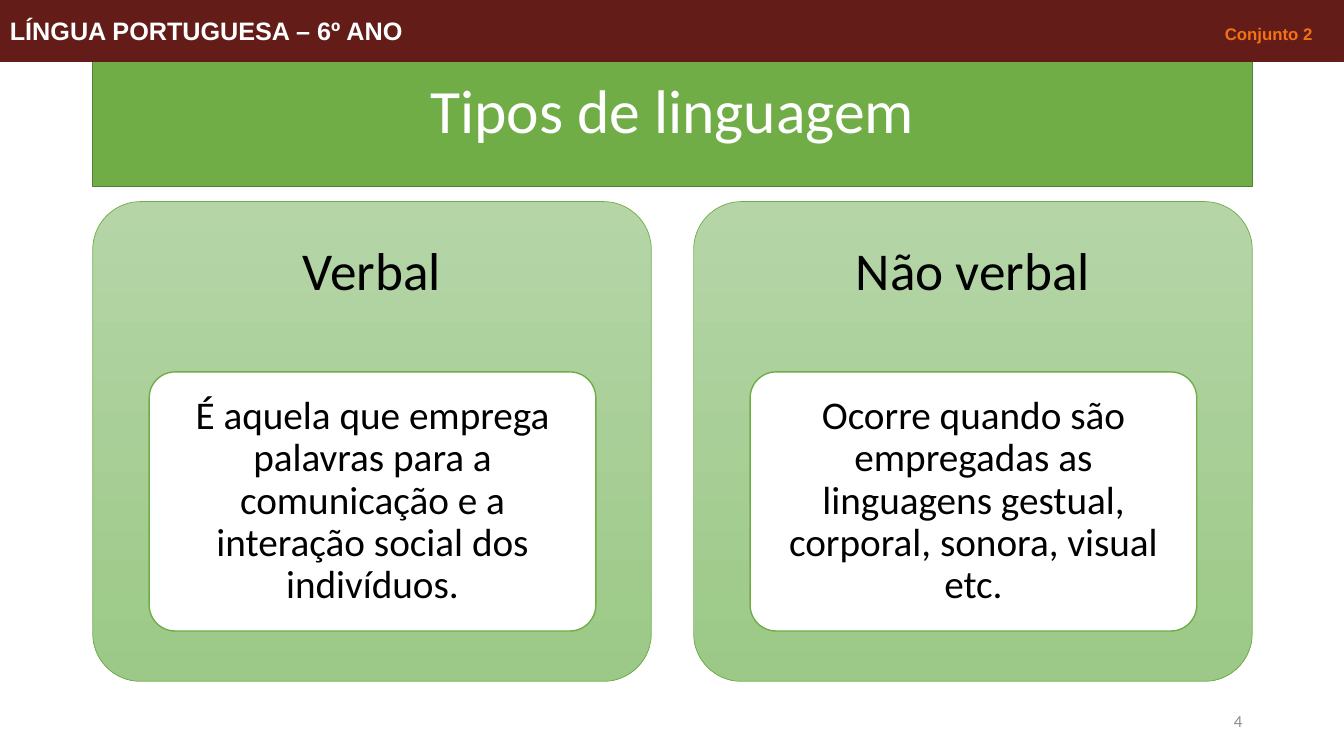
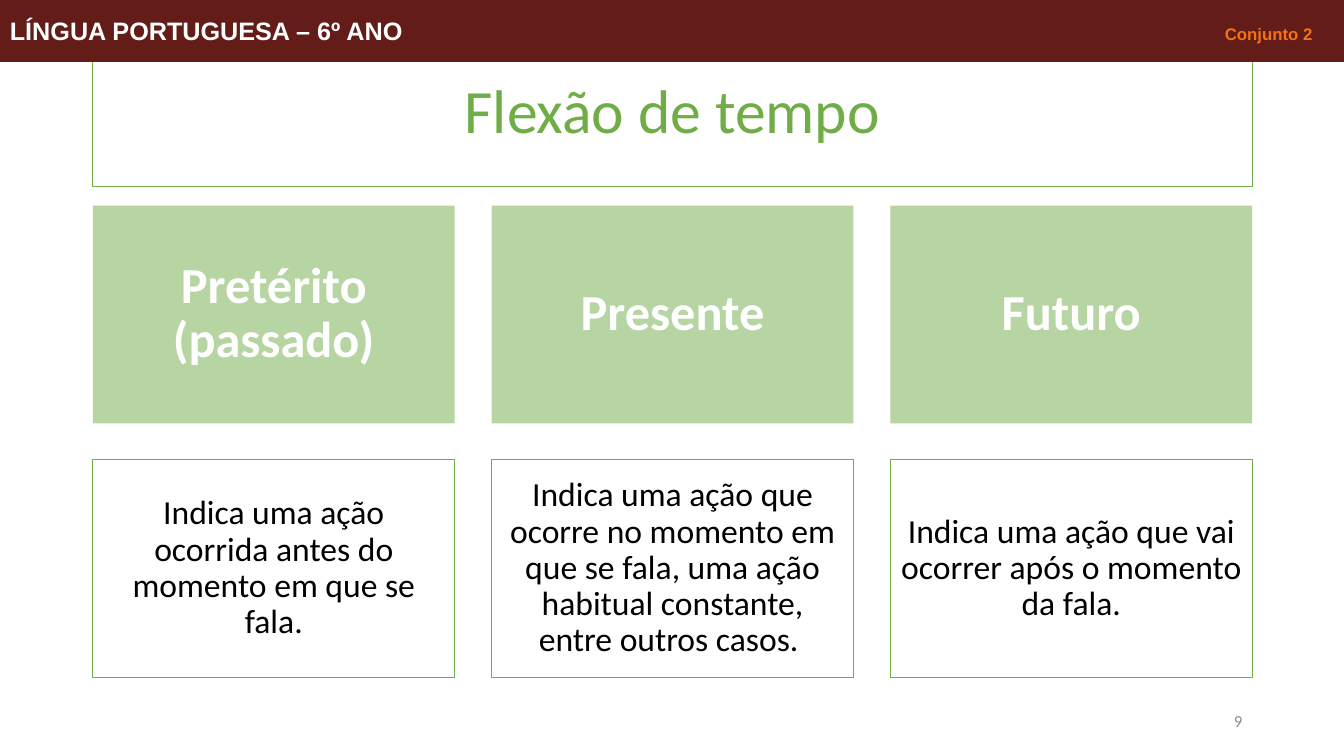
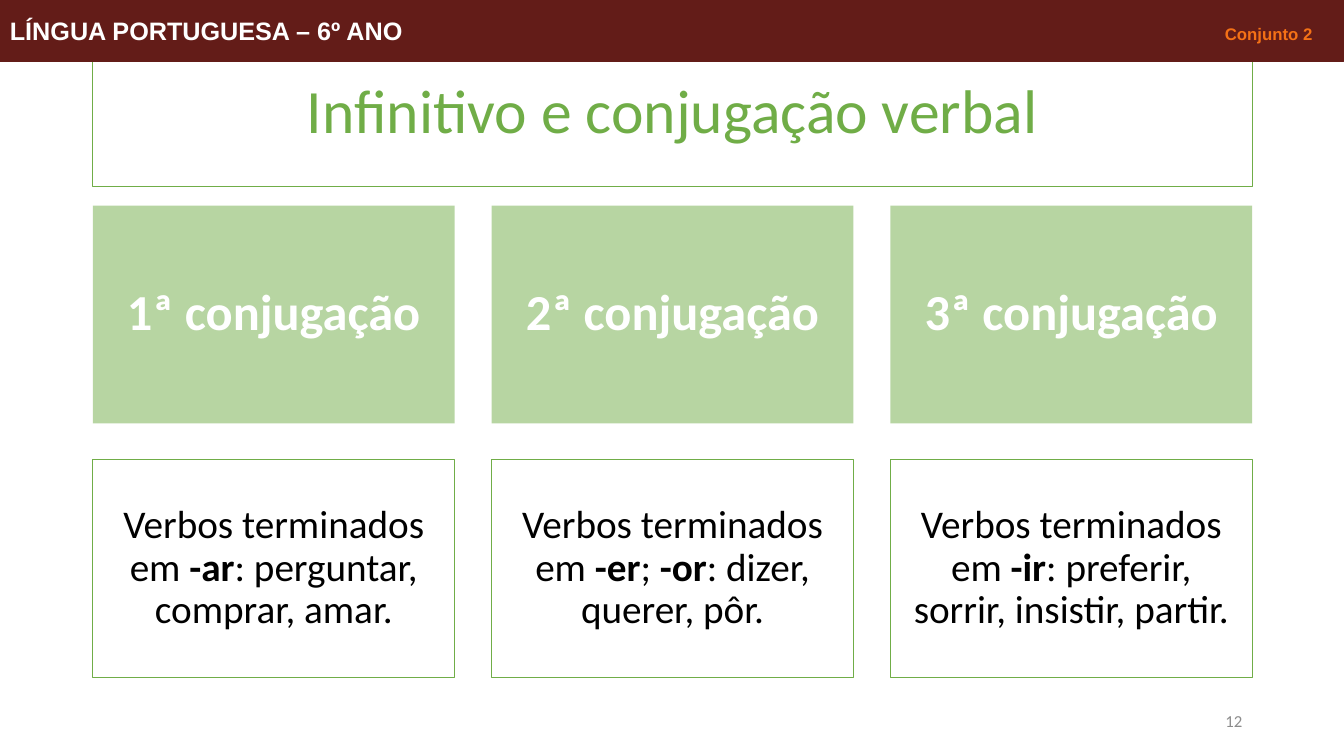
from dataclasses import dataclass

from lxml import etree
from pptx import Presentation
from pptx.dml.color import RGBColor
from pptx.enum.shapes import MSO_SHAPE
from pptx.enum.text import MSO_ANCHOR, MSO_AUTO_SIZE, PP_ALIGN
from pptx.oxml.ns import qn
from pptx.util import Inches, Pt

RECT = MSO_SHAPE.RECTANGLE
ROUNDED = MSO_SHAPE.ROUNDED_RECTANGLE
MIDDLE = MSO_ANCHOR.MIDDLE
NO_AUTOFIT = MSO_AUTO_SIZE.NONE
LEFT, CENTER, RIGHT = PP_ALIGN.LEFT, PP_ALIGN.CENTER, PP_ALIGN.RIGHT

COLORS = {
    "green": "70AD47",
    "dark_green": "538035",
    "card_top": "B5D5A7",
    "card_bottom": "9CC987",
    "maroon": "631C18",
    "orange": "F47116",
    "gray": "8C8C8C",
    "white": "FFFFFF",
    "black": "000000",
}
SLIDE_WIDTH = 13.33
MARGIN = 0.92
CONTENT_WIDTH = 11.5
TITLE_ONLY = 5


@dataclass(frozen=True)
class Box:
    left: float
    top: float
    width: float
    height: float

    def lengths(self):
        return [Inches(v) for v in (self.left, self.top, self.width, self.height)]


@dataclass(frozen=True)
class Topic:
    heading: str
    body: str


@dataclass(frozen=True)
class Lesson:
    title: str
    number: int
    topics: tuple[Topic, ...]
    body_size: int
    body_inset: float = 0.1


LANGUAGE_TYPES = Lesson("Tipos de linguagem", 4, (
    Topic("Verbal", "É aquela que emprega palavras para a comunicação e a "
          "interação social dos indivíduos."),
    Topic("Não verbal", "Ocorre quando são empregadas as linguagens gestual, "
          "corporal, sonora, visual etc."),
), 28)
TENSES = Lesson("Flexão de tempo", 9, (
    Topic("Pretérito\n(passado)",
          "Indica uma ação ocorrida antes do momento em que se fala."),
    Topic("Presente", "Indica uma ação que ocorre no momento em que se fala, "
          "uma ação habitual constante, entre outros casos. "),
    Topic("Futuro", "Indica uma ação que vai ocorrer após o momento da fala."),
), 24)
CONJUGATIONS = Lesson("Infinitivo e conjugação verbal", 12, (
    Topic("1ª conjugação",
          "Verbos terminados em **-ar**: perguntar, comprar, amar."),
    Topic("2ª conjugação",
          "Verbos terminados em **-er**; **-or**: dizer, querer, pôr."),
    Topic("3ª conjugação",
          "Verbos terminados em **-ir**: preferir, sorrir, insistir, partir."),
), 28, 0.12)


def rgb(name: str) -> RGBColor:
    return RGBColor.from_string(COLORS[name])


def add_text(paragraph, text: str, *, size: float, color: str = "black",
             font: str = "Calibri", bold: bool = False) -> None:
    """Append text; ** toggles bold and a newline breaks the line."""
    for line_index, line in enumerate(text.split("\n")):
        if line_index:
            paragraph.add_line_break()
        for part_index, part in enumerate(line.split("**")):
            run = paragraph.add_run()
            run.text = part
            run.font.size = Pt(size)
            run.font.name = font
            run.font.bold = bold or part_index % 2 == 1
            run.font.color.rgb = rgb(color)


def open_paragraph(shape, align=CENTER, spacing: float = 0.9,
                   inset_x: float = 0.1, inset_y: float = 0.05):
    """Set up the text frame and return its first paragraph."""
    frame = shape.text_frame
    frame.word_wrap = True
    frame.auto_size = NO_AUTOFIT
    frame.vertical_anchor = MIDDLE
    frame.margin_left = frame.margin_right = Inches(inset_x)
    frame.margin_top = frame.margin_bottom = Inches(inset_y)
    paragraph = frame.paragraphs[0]
    paragraph.alignment = align
    paragraph.line_spacing = spacing
    return paragraph


def paint(shape, fill: str, line: str | None = None, weight: float = 1) -> None:
    shape.fill.solid()
    shape.fill.fore_color.rgb = rgb(fill)
    outline(shape, line, weight)


def outline(shape, line: str | None, weight: float) -> None:
    if line is None:
        shape.line.fill.background()
    else:
        shape.line.color.rgb = rgb(line)
        shape.line.width = Pt(weight)


def add_panel(slide, kind, box: Box):
    panel = slide.shapes.add_shape(kind, *box.lengths())
    panel.shadow.inherit = False
    if kind == ROUNDED:
        panel.adjustments[0] = 0.1
    return panel


def set_opacity(shape, percent: int) -> None:
    color = shape.fill._xPr.find(qn("a:solidFill"))[0]
    etree.SubElement(color, qn("a:alpha"), val=str(percent * 1000))


def set_tab_stop(paragraph, position: float) -> None:
    tabs = etree.SubElement(paragraph._p.get_or_add_pPr(), qn("a:tabLst"))
    etree.SubElement(tabs, qn("a:tab"), pos=str(Inches(position)), algn="l")


def add_title(slide, text: str, fill: str, line: str, color: str) -> None:
    title = slide.shapes.title
    title.left, title.top, title.width, title.height = Box(
        MARGIN, 0.4, CONTENT_WIDTH, 1.45).lengths()
    paint(title, fill, line)
    add_text(open_paragraph(title), text, size=44, color=color)


def add_number_and_band(slide, number: int) -> None:
    page = slide.shapes.add_textbox(*Box(9.42, 6.95, 3, 0.4).lengths())
    add_text(open_paragraph(page, RIGHT, 1), str(number), size=12, color="gray")

    band = add_panel(slide, RECT, Box(0, 0, SLIDE_WIDTH, 0.61))
    paint(band, "maroon", "maroon", 0.75)
    paragraph = open_paragraph(band, LEFT, 1)
    set_tab_stop(paragraph, 12.05)
    add_text(paragraph, "LÍNGUA PORTUGUESA – 6º ANO\t", size=18, color="white",
             font="Arial", bold=True)
    add_text(paragraph, "Conjunto 2", size=12, color="orange",
             font="Arial", bold=True)


def draw_cards(slide, lesson: Lesson) -> None:
    """Rounded cards, each with a heading above a white inner panel."""
    add_title(slide, lesson.title, "green", "dark_green", "white")
    width, top = 5.54, 2
    pitch = CONTENT_WIDTH - width
    for index, topic in enumerate(lesson.topics):
        left = MARGIN + index * pitch
        card = add_panel(slide, ROUNDED, Box(left, top, width, 4.76))
        card.fill.gradient()
        card.fill.gradient_angle = 270
        for stop, color in zip(card.fill.gradient_stops,
                               ("card_top", "card_bottom")):
            stop.color.rgb = rgb(color)
        outline(card, "green", 0.5)

        heading = slide.shapes.add_textbox(*Box(left, top, width, 1.43).lengths())
        add_text(open_paragraph(heading, inset_x=0.16, inset_y=0.16),
                 topic.heading, size=38)

        inner = add_panel(slide, ROUNDED, Box(left + 0.56, 3.69, 4.43, 2.57))
        paint(inner, "white", "green")
        add_text(open_paragraph(inner, inset_x=0.08, inset_y=0.06),
                 topic.body, size=lesson.body_size)


def draw_columns(slide, lesson: Lesson) -> None:
    """Translucent heading boxes over outlined definition boxes."""
    add_title(slide, lesson.title, "white", "green", "green")
    width, height = 3.59, 2.16
    pitch = (CONTENT_WIDTH - width) / (len(lesson.topics) - 1)
    for index, topic in enumerate(lesson.topics):
        left = MARGIN + index * pitch
        heading = add_panel(slide, RECT, Box(left, 2.04, width, height))
        paint(heading, "green")
        set_opacity(heading, 50)
        add_text(open_paragraph(heading, inset_x=0.15, inset_y=0.15),
                 topic.heading, size=36, color="white", bold=True)

        definition = add_panel(slide, RECT, Box(left, 4.56, width, height))
        paint(definition, "white", "green")
        inset = lesson.body_inset
        add_text(open_paragraph(definition, inset_x=inset, inset_y=inset),
                 topic.body, size=lesson.body_size)


def main() -> None:
    deck = Presentation()
    deck.slide_width, deck.slide_height = Inches(SLIDE_WIDTH), Inches(7.5)
    for draw, lesson in ((draw_cards, LANGUAGE_TYPES),
                         (draw_columns, TENSES),
                         (draw_columns, CONJUGATIONS)):
        slide = deck.slides.add_slide(deck.slide_layouts[TITLE_ONLY])
        draw(slide, lesson)
        add_number_and_band(slide, lesson.number)
    deck.save("out.pptx")


if __name__ == "__main__":
    main()
